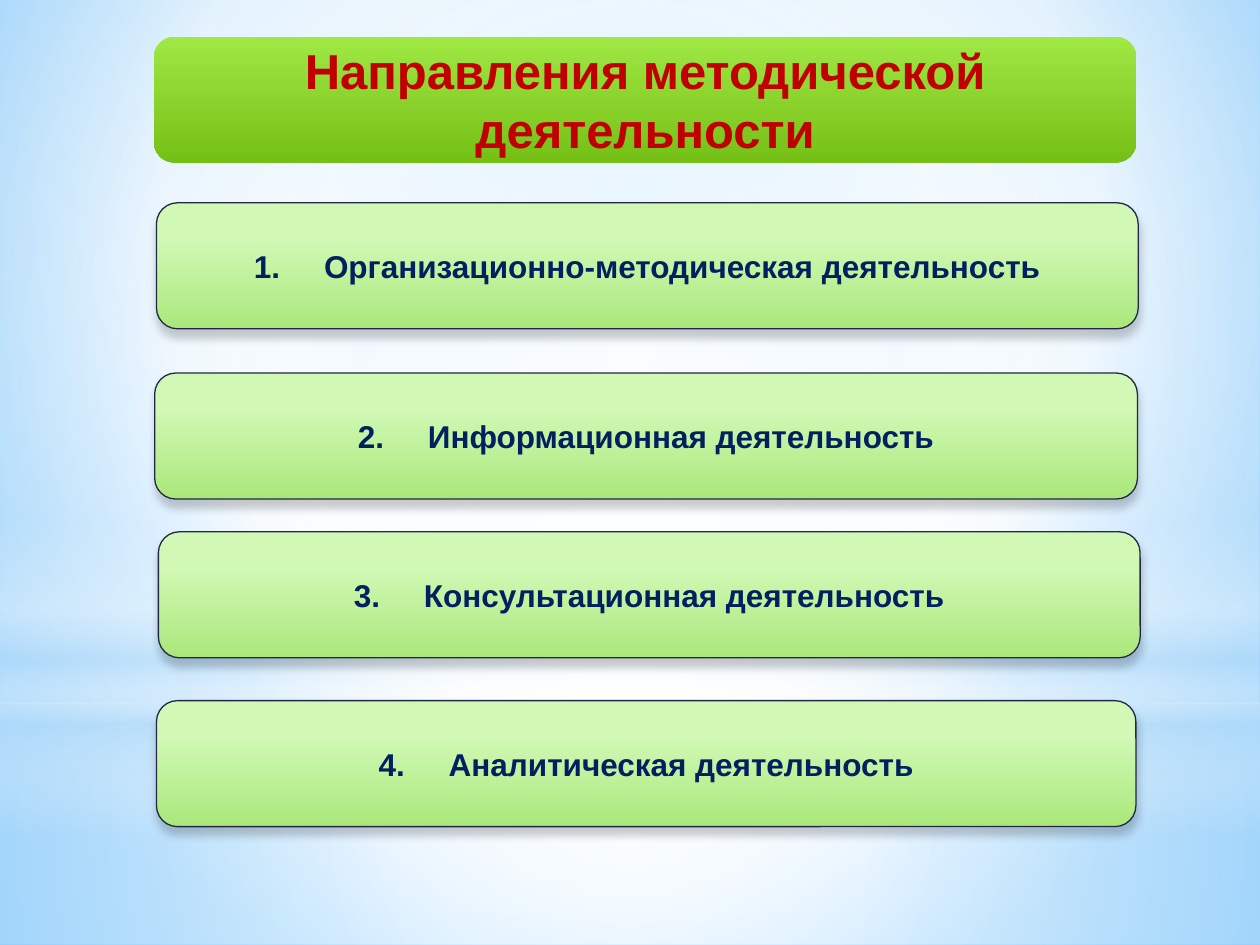
from lxml import etree
from pptx import Presentation
from pptx import util as u
from pptx.dml.color import RGBColor
from pptx.enum import shapes, text
from pptx.oxml import ns

WHITE = RGBColor(0xFF, 0xFF, 0xFF)
PALE_BLUE = RGBColor(0xB4, 0xDC, 0xFA)
SKY = RGBColor(0x9E, 0xD5, 0xFF)
DEEP_SKY = RGBColor(0x5B, 0xB9, 0xFF)
GREEN = RGBColor(0xA0, 0xE8, 0x44)
DARK_GREEN = RGBColor(0x75, 0xC0, 0x16)
LIGHT_GREEN = RGBColor(0xD1, 0xF8, 0xB5)
SOFT_GREEN = RGBColor(0xAA, 0xE8, 0x7B)
RED = RGBColor(0xC0, 0x00, 0x00)
NAVY = RGBColor(0x00, 0x20, 0x60)
OUTLINE = RGBColor(0x21, 0x27, 0x45)
BLACK = RGBColor(0, 0, 0)

# Content: wording and the left, top, width of each panel
TITLE = "Направления методической деятельности"
TITLE_BOX = (87.84, 20.88, 561.6, 72)
ACTIVITIES = [
    ("Организационно-методическая деятельность", 89.4, 115.9, 561),
    ("Информационная деятельность", 88.4, 213.2, 561.6),
    ("Консультационная деятельность", 90.5, 303.9, 561),
    ("Аналитическая деятельность", 89.4, 400.4, 559.7),
]
PANEL_HEIGHT = 72
NUMBER_GAP = 20

# Gradient stops: position %, colour, opacity %
BACKGROUND_STOPS = [(0, SKY, 100), (60, WHITE, 100), (100, DEEP_SKY, 100)]
TITLE_STOPS = [(0, GREEN, 100), (100, DARK_GREEN, 100)]
PANEL_STOPS = [(28, LIGHT_GREEN, 100), (100, SOFT_GREEN, 100)]
CENTRE = (50, 50, 50, 50)
RECTANGLE = shapes.MSO_SHAPE.RECTANGLE
ROUNDED = shapes.MSO_SHAPE.ROUNDED_RECTANGLE
BACKDROPS = [
    (RECTANGLE, (0, 401.76, 720, 138.24), CENTRE,
     [(0, WHITE, 91), (37, WHITE, 76), (100, PALE_BLUE, 79)]),
    (RECTANGLE, (0, 0, 720, 401.76), CENTRE,
     [(0, WHITE, 89), (48, WHITE, 62), (100, PALE_BLUE, 79)]),
    (RECTANGLE, (0, 296.64, 720, 180), None,
     [(0, WHITE, 0), (29, WHITE, 30), (45, PALE_BLUE, 40),
      (55, WHITE, 26), (65, PALE_BLUE, 60), (100, WHITE, 0)]),
    (shapes.MSO_SHAPE.OVAL, (0, 126, 720, 401.76), CENTRE,
     [(0, WHITE, 100), (56, WHITE, 0)]),
]
TITLE_FONT = {"name": "Arial", "size": u.Pt(28), "bold": True}
PANEL_FONT = {"name": "Arial", "size": u.Pt(18), "bold": True}


def add_element(parent, tag, **attributes):
    element = etree.SubElement(parent, ns.qn(tag))
    for name, value in attributes.items():
        element.set(name, str(value))
    return element


def add_color(parent, color, opacity):
    element = add_element(parent, "a:srgbClr", val=color)
    if opacity < 100:
        add_element(element, "a:alpha", val=opacity * 1000)


def set_gradient(properties, stops, focus=None):
    """Swap a solid fill for a circular gradient, or a downward one without focus."""
    gradient = etree.Element(ns.qn("a:gradFill"), rotWithShape="1")
    stop_list = add_element(gradient, "a:gsLst")
    for position, color, opacity in stops:
        add_color(add_element(stop_list, "a:gs", pos=position * 1000), color, opacity)
    if focus:
        circle = add_element(gradient, "a:path", path="circle")
        sides = {side: share * 1000 for side, share in zip("ltrb", focus)}
        add_element(circle, "a:fillToRect", **sides)
    else:
        add_element(gradient, "a:lin", ang=90 * 60000, scaled=0)
    solid = properties.find(ns.qn("a:solidFill"))
    properties.replace(solid, gradient)


def add_gradient_shape(slide, kind, box, stops, focus=None):
    shape = slide.shapes.add_shape(kind, *map(u.Pt, box))
    shape.shadow.inherit = False
    shape.line.fill.background()
    shape.fill.solid()
    set_gradient(shape._element.spPr, stops, focus)
    return shape


def add_run(paragraph, words, color, font):
    run = paragraph.add_run()
    run.text = words
    run.font.color.rgb = color
    for name, value in font.items():
        setattr(run.font, name, value)
    return run


def center_text(shape):
    frame = shape.text_frame
    frame.word_wrap = True
    frame.vertical_anchor = text.MSO_ANCHOR.MIDDLE
    paragraph = frame.paragraphs[0]
    paragraph.alignment = text.PP_ALIGN.CENTER
    return paragraph


def add_panel(slide, number, words, box):
    shape = add_gradient_shape(slide, ROUNDED, box, PANEL_STOPS)
    shape.line.color.rgb = OUTLINE
    shape.line.width = u.Pt(0.75)
    effects = shape._element.spPr.find(ns.qn("a:effectLst"))
    shadow = add_element(effects, "a:outerShdw", blurRad=u.Pt(5), dist=u.Pt(4),
                         dir=90 * 60000, rotWithShape=0)
    add_color(shadow, BLACK, 20)
    paragraph = center_text(shape)
    add_run(paragraph, f"{number}.", NAVY, PANEL_FONT)
    # One widened space separates the number from the wording
    gap = add_run(paragraph, " ", NAVY, PANEL_FONT)
    gap.font._element.set("spc", str(NUMBER_GAP * 100))
    add_run(paragraph, words, NAVY, PANEL_FONT)


def main():
    presentation = Presentation()
    presentation.slide_width, presentation.slide_height = u.Pt(720), u.Pt(540)
    slide = presentation.slides.add_slide(presentation.slide_layouts[6])

    # Background and soft light
    slide.background.fill.solid()
    background = slide._element.find(".//" + ns.qn("p:bgPr"))
    set_gradient(background, BACKGROUND_STOPS, (20, 10, 20, 60))
    for kind, box, focus, stops in BACKDROPS:
        add_gradient_shape(slide, kind, box, stops, focus)

    # Title
    title = add_gradient_shape(slide, ROUNDED, TITLE_BOX, TITLE_STOPS)
    add_run(center_text(title), TITLE, RED, TITLE_FONT)

    # Numbered activities
    for number, (words, left, top, width) in enumerate(ACTIVITIES, 1):
        add_panel(slide, number, words, (left, top, width, PANEL_HEIGHT))

    presentation.save("out.pptx")


if __name__ == "__main__":
    main()
